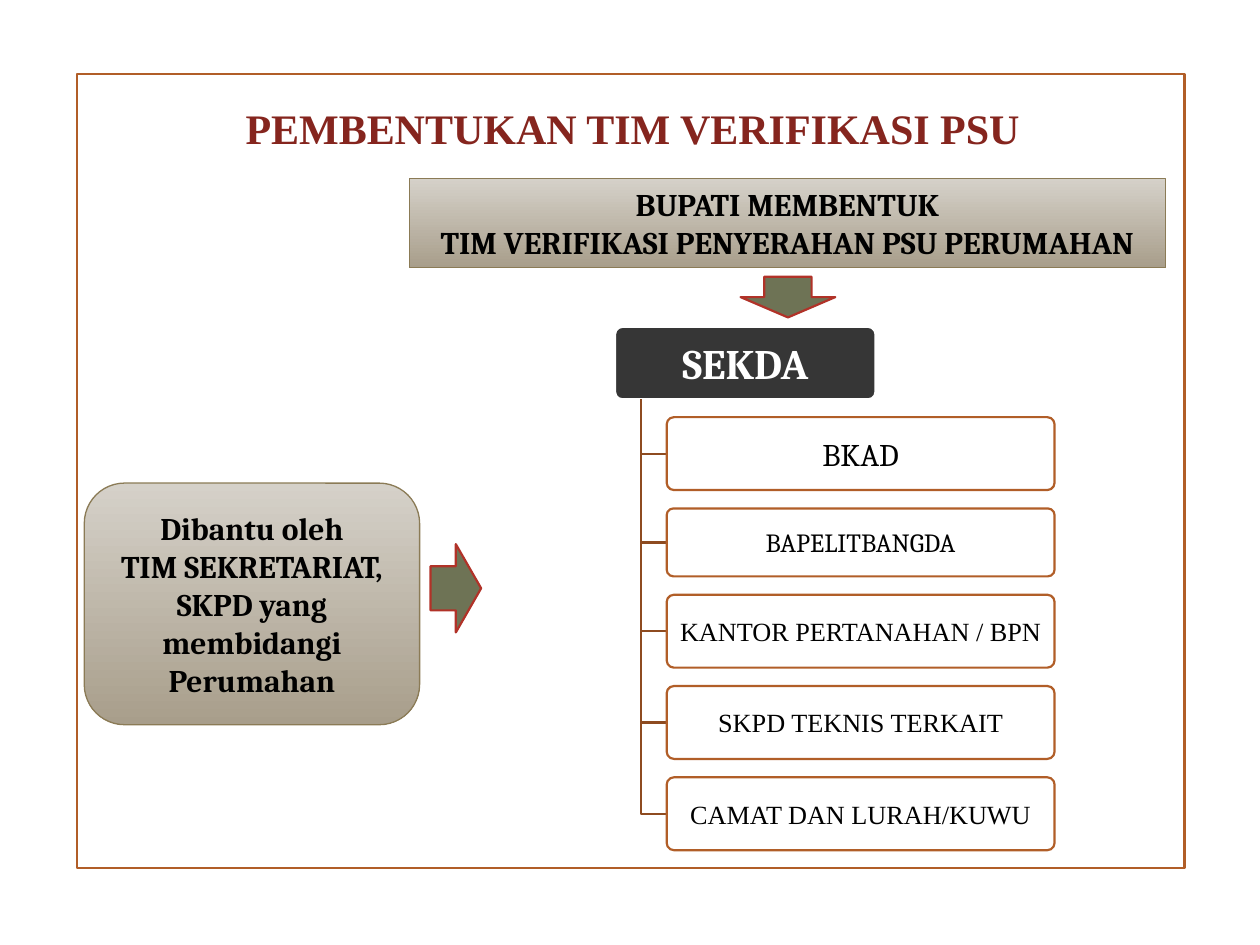
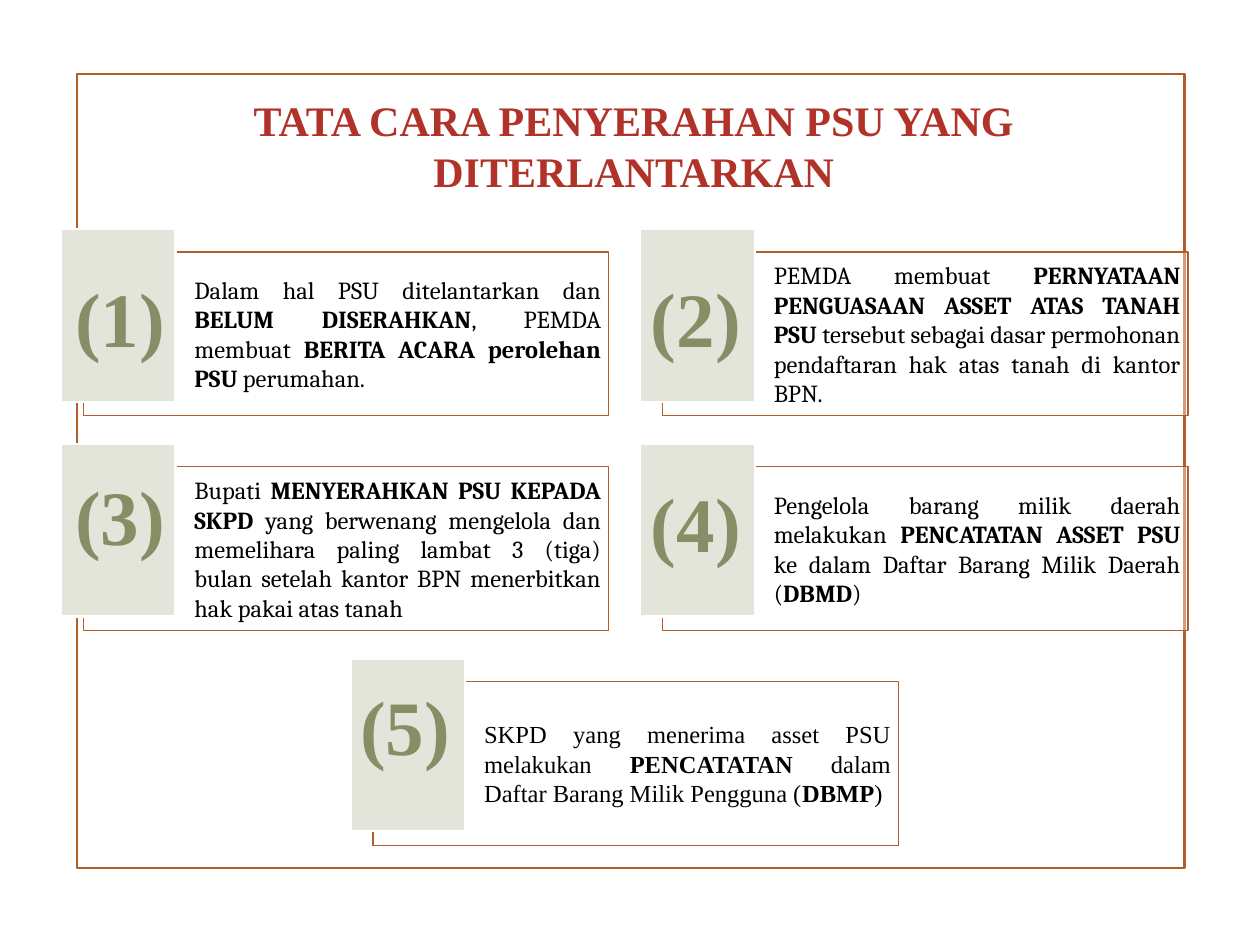
from lxml import etree
from pptx import Presentation
from pptx.dml.color import RGBColor
from pptx.enum.shapes import MSO_SHAPE
from pptx.enum.text import MSO_ANCHOR, MSO_AUTO_SIZE, PP_ALIGN
from pptx.oxml.ns import qn
from pptx.util import Cm, Pt

RECT, ROUND = MSO_SHAPE.RECTANGLE, MSO_SHAPE.ROUNDED_RECTANGLE
DOWN, RIGHT = MSO_SHAPE.DOWN_ARROW, MSO_SHAPE.RIGHT_ARROW
TOP, MIDDLE = MSO_ANCHOR.TOP, MSO_ANCHOR.MIDDLE
CENTER, JUSTIFY = PP_ALIGN.CENTER, PP_ALIGN.JUSTIFY
SERIF, ROMAN = "Cambria", "Times New Roman"
PADS = (0.25, 0.13, 0.25, 0.13)
COLORS = {
    "white": "FFFFFF", "black": "000000", "rust": "B15E28", "brown": "8E4B20",
    "wine": "85251E", "red": "B13228", "olive": "6E7355", "sand": "D5D1C9",
    "clay": "A89E8B", "khaki": "8B7B56", "dark": "363636", "pale": "E3E5DB",
    "moss": "878E66",
}


def tint(name):
    return RGBColor.from_string(COLORS[name])


class Deck:
    """Shared style and the current slide."""

    def __init__(self):
        self.prs = Presentation()
        self.prs.slide_width, self.prs.slide_height = Cm(25.4), Cm(19.05)

    def start(self, title, color, box):
        """New slide with its frame and title."""
        self.slide = self.prs.slides.add_slide(self.prs.slide_layouts[5])
        self.shape(RECT, (1.55, 1.5, 22.33, 16), None, "rust")
        head = self.slide.shapes.title
        head.left, head.top, head.width, head.height = map(Cm, box)
        self.put(head, [title], 24, ROMAN, color, bold=True, anchor=TOP)

    def shape(self, kind, box, fill, line, width=1.25, alpha=None, adj=None):
        item = self.slide.shapes.add_shape(kind, *map(Cm, box))
        item.shadow.inherit = False
        if adj is not None:
            item.adjustments[0] = adj
        if fill is None:
            item.fill.background()
        elif isinstance(fill, tuple):
            item.fill.gradient()
            item.fill.gradient_angle = 270
            for stop, name in zip(item.fill.gradient_stops, fill):
                stop.color.rgb = tint(name)
        else:
            item.fill.solid()
            item.fill.fore_color.rgb = tint(fill)
        if alpha:
            rgb = item.element.find(".//" + qn("a:srgbClr"))
            etree.SubElement(rgb, qn("a:alpha"), val=str(alpha * 1000))
        item.line.color.rgb = tint(line)
        item.line.width = Pt(width)
        return item

    def put(self, item, lines, size, font=SERIF, color="black", bold=False,
            align=CENTER, anchor=MIDDLE, pads=PADS):
        """Fill a shape with text; asterisks enclose bold words."""
        frame = item.text_frame
        frame.word_wrap = True
        frame.auto_size = MSO_AUTO_SIZE.NONE
        frame.vertical_anchor = anchor
        (frame.margin_left, frame.margin_top,
         frame.margin_right, frame.margin_bottom) = map(Cm, pads)
        for i, line in enumerate(lines):
            para = frame.add_paragraph() if i else frame.paragraphs[0]
            para.alignment = align
            para.font.name, para.font.size = font, Pt(size)
            para.font.color.rgb = tint(color)
            para.font.bold = bold
            for j, part in enumerate(line.split("*")):
                run = para.add_run()
                run.text = part
                if j % 2:
                    run.font.bold = True

    def label(self, box, text, size, font, color):
        item = self.slide.shapes.add_textbox(*map(Cm, box))
        self.put(item, [text], size, font, color, bold=True, anchor=TOP)

    def panel(self, kind, box, lines, anchor):
        item = self.shape(kind, box, ("sand", "clay"), "khaki", 0.75)
        self.put(item, lines, 18, bold=True, anchor=anchor)

    def arrow(self, kind, box):
        self.shape(kind, box, "olive", "red")

    def elbow(self, x, y, end_x, end_y):
        """Branch line that runs down, then right."""
        pen = self.slide.shapes.build_freeform(Cm(x), Cm(y))
        pen.add_line_segments([(Cm(x), Cm(end_y)), (Cm(end_x), Cm(end_y))],
                              close=False)
        item = pen.convert_to_shape()
        item.shadow.inherit = False
        item.fill.background()
        item.line.color.rgb = tint("brown")
        item.line.width = Pt(1.25)

    def card(self, x, y, text, font):
        """Step text with a tile over its left corner."""
        item = self.shape(RECT, (x, y, 10.59, 3.3), "white", "rust", 0.75, 40)
        self.put(item, [text], 14, font, align=JUSTIFY,
                 pads=(2.24, 0.15, 0.15, 0.15))
        self.shape(RECT, (x - 0.45, y - 0.46, 2.31, 3.48), "pale", "white")


def team(deck):
    deck.start("PEMBENTUKAN TIM VERIFIKASI PSU", "wine",
               (2.01, 1.93, 21.49, 1.27))
    deck.panel(RECT, (8.25, 3.6, 15.25, 1.8),
               ["BUPATI MEMBENTUK", "TIM VERIFIKASI PENYERAHAN PSU PERUMAHAN"],
               TOP)
    deck.arrow(DOWN, (14.93, 5.58, 1.91, 0.82))
    deck.panel(ROUND, (1.7, 9.74, 6.76, 4.87),
               ["Dibantu oleh",
                "TIM SEKRETARIAT, SKPD yang membidangi Perumahan"], MIDDLE)

    # Head of the tree
    head = deck.shape(ROUND, (12.4, 6.59, 5.25, 1.46), "dark", "white", adj=0.1)
    deck.put(head, ["SEKDA"], 24, color="white", bold=True,
             pads=(0.13, 0.08, 0.13, 0.08))

    # Members
    members = [
        ("BKAD", 1.47, 18, SERIF),
        ("BAPELITBANGDA", 1.37, 15, SERIF),
        ("KANTOR PERTANAHAN / BPN", 1.47, 15, ROMAN),
        ("SKPD TEKNIS TERKAIT", 1.47, 15, ROMAN),
        ("CAMAT DAN LURAH/KUWU", 1.47, 15, ROMAN),
    ]
    y, gap = 8.41, 0.37
    for name, high, size, font in members:
        deck.elbow(12.92, 8.05, 13.44, y + high / 2)
        box = deck.shape(ROUND, (13.44, y, 7.82, high), "white", "rust",
                         alpha=90, adj=0.1)
        deck.put(box, [name], size, font, pads=(0.08, 0.05, 0.08, 0.05))
        y += high + gap
    deck.arrow(RIGHT, (8.68, 10.97, 1.02, 1.78))


def steps(deck):
    deck.start("TATA CARA PENYERAHAN PSU YANG DITERLANTARKAN", "red",
               (1.98, 1.78, 21.59, 2.31))
    # Column, row, text, font, place of the number
    cards = [
        (0, 0, "Dalam hal PSU ditelantarkan dan *BELUM DISERAHKAN*, PEMDA "
         "membuat *BERITA ACARA perolehan PSU* perumahan.",
         SERIF, (1.24, 5.33)),
        (1, 0, "PEMDA membuat *PERNYATAAN PENGUASAAN ASSET ATAS TANAH PSU "
         "*tersebut sebagai dasar permohonan pendaftaran hak atas tanah di "
         "kantor BPN.", SERIF, (12.85, 5.33)),
        (0, 1, "Bupati *MENYERAHKAN PSU KEPADA SKPD *yang berwenang mengelola "
         "dan memelihara paling lambat 3 (tiga) bulan setelah kantor BPN "
         "menerbitkan hak pakai atas tanah", SERIF, (1.24, 9.32)),
        (1, 1, "Pengelola barang milik daerah melakukan *PENCATATAN ASSET PSU "
         "*ke dalam Daftar Barang Milik Daerah (*DBMD*)",
         SERIF, (12.85, 9.45)),
        (0.5, 2, "SKPD yang menerima asset PSU melakukan *PENCATATAN *dalam "
         "Daftar Barang Milik Pengguna (*DBMP*)", ROMAN, (6.99, 13.54)),
    ]
    for i, (col, row, text, font, spot) in enumerate(cards, 1):
        deck.card(1.68 + 11.68 * col, 5.08 + 4.33 * row, text, font)
        deck.label((*spot, 2.36, 2.13), f"({i})", 44, ROMAN, "moss")


def main():
    deck = Deck()
    team(deck)
    steps(deck)
    deck.prs.save("out.pptx")


if __name__ == "__main__":
    main()
